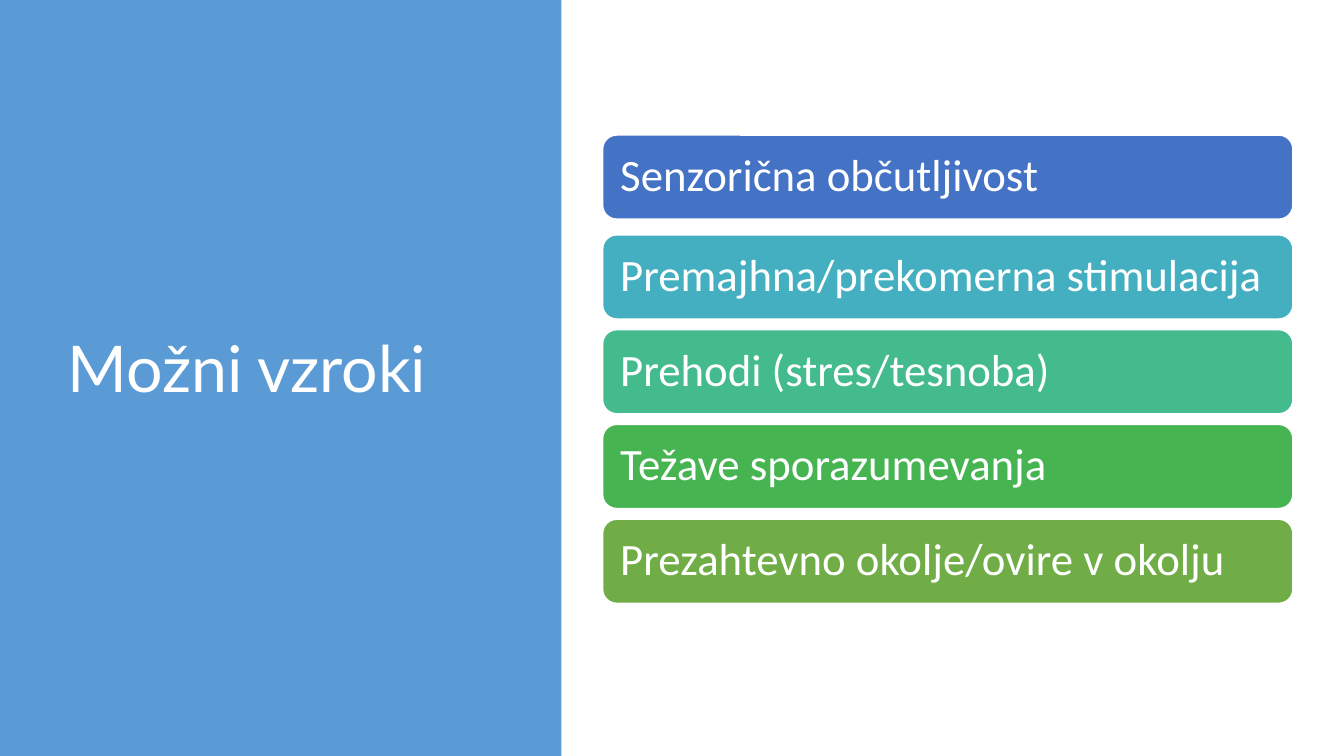
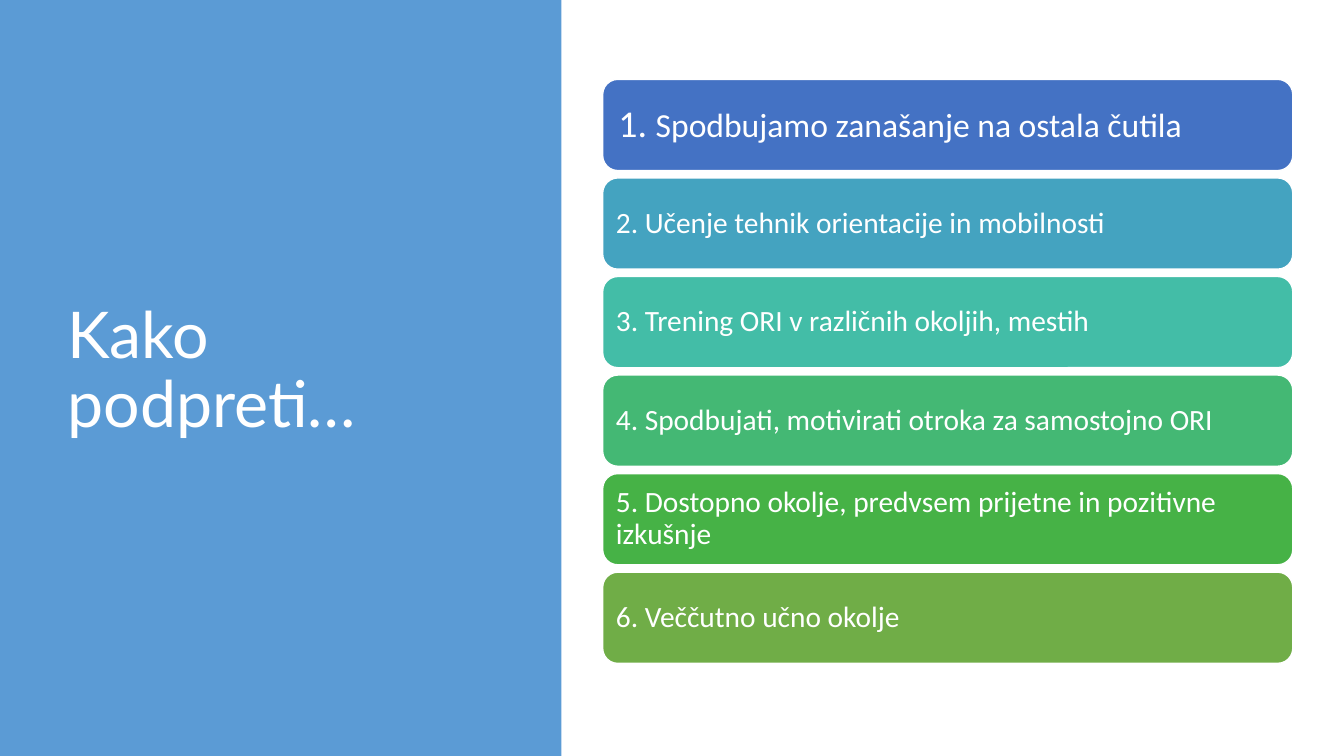
"""Build two slides that each list topics as coloured bars beside a title panel."""
import dataclasses

import pptx
import pptx.dml.color
import pptx.enum.shapes
import pptx.enum.text
import pptx.util

Pt = pptx.util.Pt
SHAPES = pptx.enum.shapes.MSO_SHAPE


@dataclasses.dataclass(frozen=True)
class Theme:
    """Colours, fonts, type sizes and shared lengths in points."""

    white: str = "FFFFFF"
    panel: str = "5B9BD5"
    cause_colours: tuple = ("4472C4", "43AFC0", "43BB8D", "45B451", "70AD47")
    support_colours: tuple = ("4472C4", "44A3C0", "43BDA7", "44B874", "46B246", "70AD47")
    title_font: str = "Lato"
    body_font: str = "Calibri"
    title_size: float = 46
    cause_size: float = 32
    number_size: float = 27
    lead_size: float = 24
    support_size: float = 21
    line_spacing: float = 0.9
    slide_width: float = 960
    slide_height: float = 540
    panel_width: float = 401
    title_left: float = 41
    title_top: float = 49
    title_height: float = 433.5
    bar_left: float = 430.5
    bar_width: float = 493


THEME = Theme()


@dataclasses.dataclass(frozen=True)
class Topic:
    """One bar: its text runs as (text, size) pairs and its inner margin."""

    runs: tuple
    margin: float


def rgb(colour):
    """Turn a hex string into a colour."""
    return pptx.dml.color.RGBColor.from_string(colour)


def write_text(frame, runs, *, font, colour=THEME.white, margins=(7.2, 3.6)):
    """Write (text, size) runs as one left-aligned, vertically centred paragraph."""
    frame.word_wrap = True
    frame.auto_size = pptx.enum.text.MSO_AUTO_SIZE.NONE
    frame.vertical_anchor = pptx.enum.text.MSO_ANCHOR.MIDDLE
    side, end = margins
    frame.margin_left = frame.margin_right = Pt(side)
    frame.margin_top = frame.margin_bottom = Pt(end)
    paragraph = frame.paragraphs[0]
    paragraph.alignment = pptx.enum.text.PP_ALIGN.LEFT
    paragraph.line_spacing = THEME.line_spacing
    for text, size in runs:
        run = paragraph.add_run()
        run.text = text
        run.font.name = font
        run.font.size = Pt(size)
        run.font.color.rgb = rgb(colour)


def add_block(slide, kind, left, top, width, height, fill, outline=None):
    """Add a flat filled shape, outlined only when a colour is given."""
    block = slide.shapes.add_shape(kind, Pt(left), Pt(top), Pt(width), Pt(height))
    block.shadow.inherit = False
    block.fill.solid()
    block.fill.fore_color.rgb = rgb(fill)
    if outline:
        block.line.color.rgb = rgb(outline)
        block.line.width = Pt(1)
    else:
        block.line.fill.background()
    return block


def add_panel_slide(deck, heading, title_width):
    """Add a slide with the side panel and its title."""
    slide = deck.slides.add_slide(deck.slide_layouts.get_by_name("Title Only"))
    panel = add_block(slide, SHAPES.RECTANGLE, 0, 0, THEME.panel_width,
                      THEME.slide_height, THEME.panel)
    title = slide.shapes.title
    title.element.addprevious(panel.element)
    title.left, title.top = Pt(THEME.title_left), Pt(THEME.title_top)
    title.width, title.height = Pt(title_width), Pt(THEME.title_height)
    write_text(title.text_frame, [(heading, THEME.title_size)], font=THEME.title_font)
    return slide


def add_bars(slide, topics, colours, *, top, height, pitch, lead_gap=0):
    """Stack the topics at an even pitch, with an extra gap below the first."""
    for index, (topic, colour) in enumerate(zip(topics, colours)):
        bar_top = top + index * pitch + (lead_gap if index else 0)
        bar = add_block(slide, SHAPES.ROUNDED_RECTANGLE, THEME.bar_left, bar_top,
                        THEME.bar_width, height, colour, THEME.white)
        write_text(bar.text_frame, topic.runs, font=THEME.body_font,
                   margins=(topic.margin, topic.margin))


def add_causes(deck):
    """Add the slide of possible causes."""
    causes = [
        "Senzorična občutljivost",
        "Premajhna/prekomerna stimulacija",
        "Prehodi (stres/tesnoba)",
        "Težave sporazumevanja",
        "Prezahtevno okolje/ovire v okolju",
    ]
    topics = [Topic(((cause, THEME.cause_size),), 9.6) for cause in causes]
    slide = add_panel_slide(deck, "Možni vzroki", 299.5)
    add_bars(slide, topics, THEME.cause_colours,
             top=96.5, height=60, pitch=67.7, lead_gap=3.6)


def add_support(deck):
    """Add the slide of ways to give support."""
    lead = Topic((("1. ", THEME.number_size),
                  ("Spodbujamo zanašanje na ostala čutila", THEME.lead_size)), 8.1)
    steps = [
        "Učenje tehnik orientacije in mobilnosti",
        "Trening ORI v različnih okoljih, mestih",
        "Spodbujati, motivirati otroka za samostojno ORI",
        "Dostopno okolje, predvsem prijetne in pozitivne izkušnje",
        "Veččutno učno okolje",
    ]
    topics = [lead] + [Topic(((f"{number}. {step}", THEME.support_size),), 6.3)
                       for number, step in enumerate(steps, 2)]
    slide = add_panel_slide(deck, "Kako podpreti…", 332.5)
    add_bars(slide, topics, THEME.support_colours, top=56.7, height=65.2, pitch=70.4)


def main():
    """Build and save the deck."""
    deck = pptx.Presentation()
    deck.slide_width = Pt(THEME.slide_width)
    deck.slide_height = Pt(THEME.slide_height)
    add_causes(deck)
    add_support(deck)
    deck.save("out.pptx")


if __name__ == "__main__":
    main()
